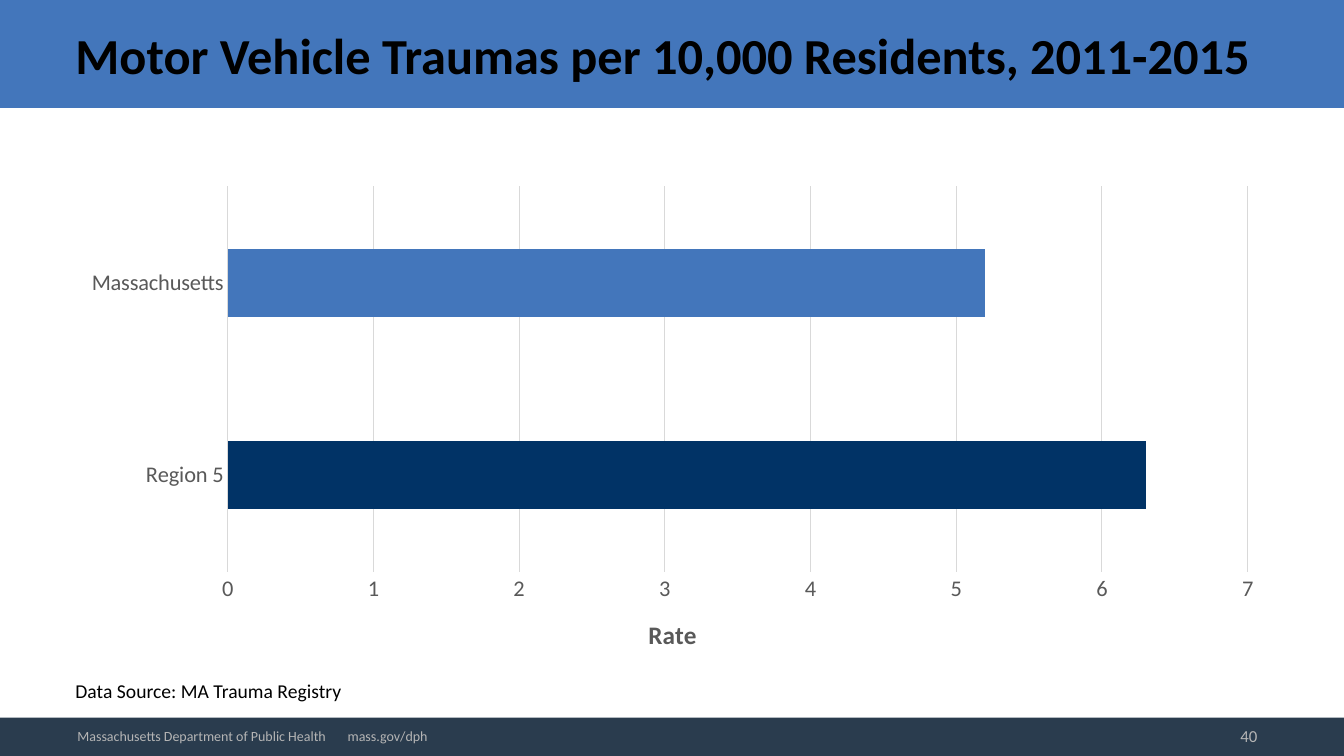
from pptx import Presentation
from pptx.chart.data import CategoryChartData
from pptx.dml.color import RGBColor
from pptx.enum.chart import XL_CHART_TYPE as ChartType, XL_TICK_MARK as TickMark
from pptx.enum.shapes import MSO_SHAPE as Shape
from pptx.enum.text import MSO_ANCHOR as Anchor, PP_ALIGN as Align
from pptx.oxml import parse_xml
from pptx.oxml.ns import nsdecls
from pptx.util import Inches, Pt


def style_font(font, size, color, bold=False):
    font.name = "Calibri"
    font.size = Pt(size)
    font.bold = bold
    font.color.rgb = RGBColor.from_string(color)


def add_text(text, place, size, color, bold=False, anchor=Anchor.MIDDLE, align=Align.LEFT):
    box = page.shapes.add_textbox(*map(Inches, place))
    frame = box.text_frame
    frame.word_wrap = True
    frame.vertical_anchor = anchor
    para = frame.paragraphs[0]
    para.text = text
    para.alignment = align
    return para, style_font(para.font, size, color, bold)


deck = Presentation()
deck.slide_width = Inches(13.33)
deck.slide_height = Inches(7.5)
page = deck.slides.add_slide(deck.slide_layouts[6])

for top, height, color in [(0, 1.07, "4376BB"), (7.12, 0.38, "2A3C4E")]:
    band = page.shapes.add_shape(
        Shape.RECTANGLE, 0, Inches(top), deck.slide_width, Inches(height))
    band.shadow.inherit = False
    band.fill.solid()
    band.fill.fore_color.rgb = RGBColor.from_string(color)
    band.line.fill.background()

add_text("Motor Vehicle Traumas per 10,000 Residents, 2011-2015",
         (0.65, 0.06, 12, 0.96), 36, "000000", bold=True)
add_text("Data Source: MA Trauma Registry",
         (0.65, 6.69, 3.04, 0.34), 14, "000000", anchor=Anchor.TOP)
add_text("40", (9.58, 7.1, 2.99, 0.4), 12, "B5B5B5", align=Align.RIGHT)
footer, _ = add_text("Massachusetts Department of Public Health\tmass.gov/dph",
                     (0.67, 7.12, 4.17, 0.37), 10, "B5B5B5")
footer_tabs = parse_xml(
    f'<a:tabLst {nsdecls("a")}><a:tab pos="{Inches(2.68)}" algn="l"/></a:tabLst>')
footer_properties = footer._p.get_or_add_pPr()
footer_properties.insert(0, footer_tabs)

rates = CategoryChartData()
rates.categories = ["Region 5", "Massachusetts"]
rates.add_series("Series 1", [6.3, 5.2])
chart = page.shapes.add_chart(
    ChartType.BAR_CLUSTERED, Inches(0.67), Inches(1.75), Inches(12), Inches(4.95), rates).chart
style_font(chart.font, 10, "000000")
chart.has_legend = False
chart.has_title = False

plot = chart.plots[0]
plot.gap_width = 182
plot.vary_by_categories = False
bars = plot.series[0]
for bar, color in [(bars, "4376BB"), (bars.points[0], "013366")]:
    bar.format.fill.solid()
    bar.format.fill.fore_color.rgb = RGBColor.from_string(color)

region_axis, rate_axis = chart.category_axis, chart.value_axis
for axis in (region_axis, rate_axis):
    axis.major_tick_mark = TickMark.NONE
    axis.minor_tick_mark = TickMark.NONE
    style_font(axis.tick_labels.font, 16, "595959")
region_axis.has_major_gridlines = False
rate_axis.has_major_gridlines = True
for line in (region_axis.format.line, rate_axis.major_gridlines.format.line):
    line.color.rgb = RGBColor.from_string("D9D9D9")
    line.width = Pt(0.75)

rate_axis.format.line.fill.background()
rate_axis.minimum_scale = 0
rate_axis.maximum_scale = 7
rate_axis.major_unit = 1
rate_axis.tick_labels.number_format = "General"
rate_axis.tick_labels.number_format_is_linked = False
rate_title = rate_axis.axis_title.text_frame
rate_title.text = "Rate"
style_font(rate_title.paragraphs[0].font, 18, "595959", bold=True)

deck.save("out.pptx")
